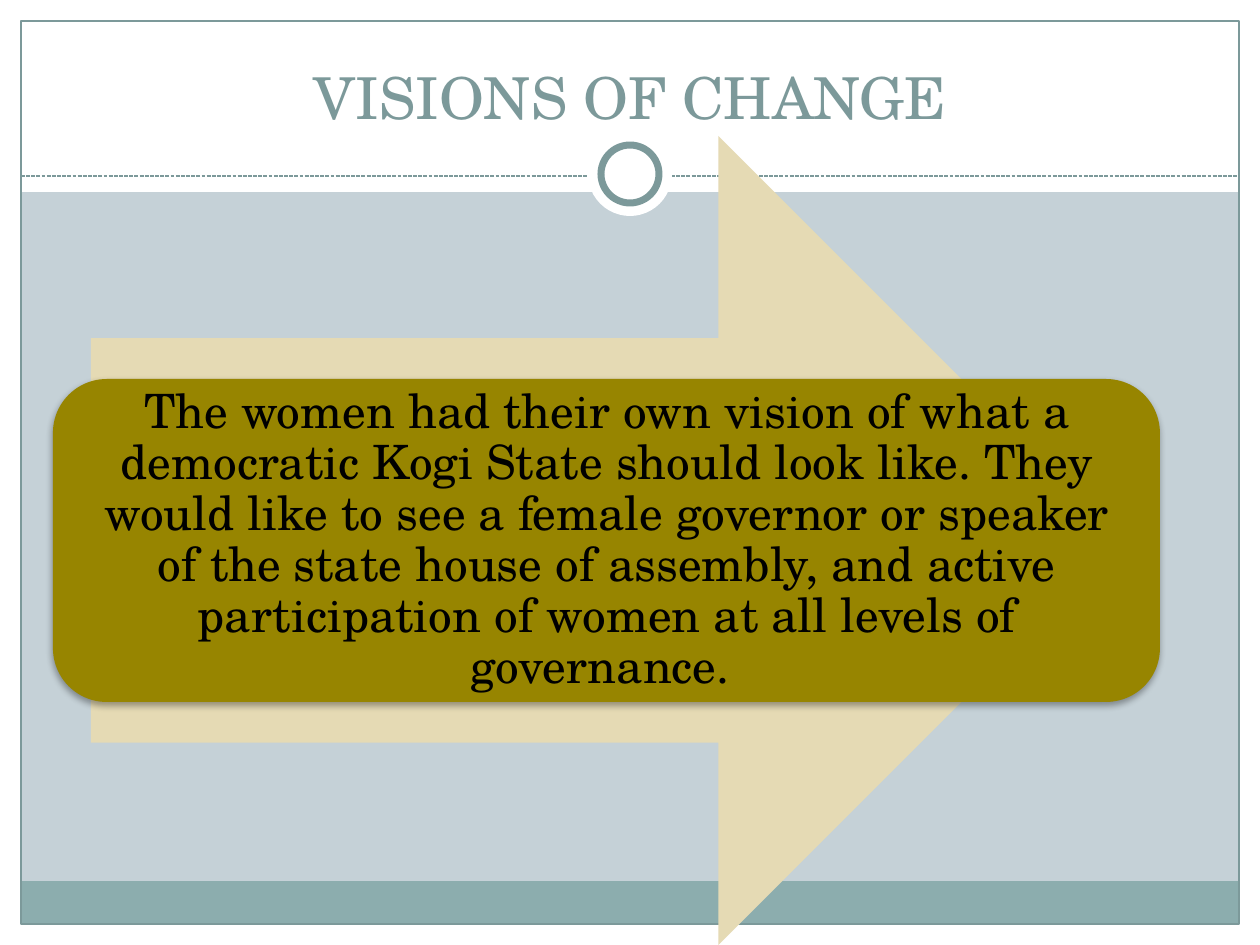
import pptx
import pptx.util
import pptx.dml.color
import pptx.oxml
import pptx.oxml.ns
from pptx.enum.dml import MSO_LINE
from pptx.enum.shapes import MSO_CONNECTOR, MSO_SHAPE
from pptx.enum.text import MSO_ANCHOR, PP_ALIGN

PX = 914400 / 126
WIDE, HIGH = 1260, 945
EDGE = 21
FONT = "TeX Gyre Schola"
WHITE, TEAL = "FFFFFF", "7C999A"
NS = pptx.oxml.ns.nsdecls("a")


def px(n):
    return pptx.util.Emu(round(n * PX))


def rgb(code):
    return pptx.dml.color.RGBColor.from_string(code)


def effect(item, inner=""):
    """Give a shape or connector its own effect list, empty by default."""
    item._element.spPr.append(
        pptx.oxml.parse_xml(f"<a:effectLst {NS}>{inner}</a:effectLst>"))


def draw(slide, kind, box, fill=None, line=None, width=0.75):
    item = slide.shapes.add_shape(kind, *map(px, box))
    item.shadow.inherit = False
    if fill:
        item.fill.solid()
        item.fill.fore_color.rgb = rgb(fill)
    else:
        item.fill.background()
    if line:
        item.line.color.rgb = rgb(line)
        item.line.width = pptx.util.Pt(width)
    else:
        item.line.fill.background()
    return item


def write(slide, box, text, size, color, anchor, pad, gap=1.0):
    """Place centred text; pad holds the side and the top inset."""
    frame = slide.shapes.add_textbox(*map(px, box)).text_frame
    frame.word_wrap = True
    frame.vertical_anchor = anchor
    frame.margin_left = frame.margin_right = px(pad[0])
    frame.margin_top = frame.margin_bottom = px(pad[1])
    para = frame.paragraphs[0]
    para.alignment = PP_ALIGN.CENTER
    para.line_spacing = gap
    run = para.add_run()
    run.text = text
    run.font.name = FONT
    run.font.size = pptx.util.Pt(size)
    run.font.color.rgb = rgb(color)


def border(slide, box):
    """White margins, foot band and thin outline around the page."""
    x, y, w, h = box
    rect = MSO_SHAPE.RECTANGLE
    for part in ((x, y + h - EDGE, w, EDGE), (x, y, w, 192),
                 (x, y, EDGE, h), (x + w - EDGE, y, EDGE, h)):
        draw(slide, rect, part, WHITE)
    inner = w - 2 * EDGE
    draw(slide, rect, (x + EDGE, y + h - EDGE - 43, inner, 43), "8CADAE")
    draw(slide, rect, (x + EDGE, y + EDGE, inner, h - 2 * EDGE), line=TEAL)


def header(slide, box):
    """Title over a dashed rule with a ring at its middle."""
    x, y, w, h = box
    rule = slide.shapes.add_connector(
        MSO_CONNECTOR.STRAIGHT, px(x), px(y + h), px(x + w), px(y + h))
    rule.line.color.rgb = rgb(TEAL)
    rule.line.width = pptx.util.Pt(0.75)
    rule.line.dash_style = MSO_LINE.SQUARE_DOT
    effect(rule)
    mid, level = x + w / 2, y + h - 2
    for size, line in ((84, None), (58, TEAL)):
        spot = (mid - size / 2, level - size / 2, size, size)
        draw(slide, MSO_SHAPE.OVAL, spot, WHITE, line, 4)
    write(slide, (x + 21, y + 11, w - 42, 105), "VISIONS OF CHANGE",
          33, TEAL, MSO_ANCHOR.BOTTOM, (13, 6))


def vision(slide, box):
    """Broad arrow with a rounded message card across it."""
    x, y, w, h = box
    draw(slide, MSO_SHAPE.RIGHT_ARROW, box, "E5DAB4")
    left, top, wide, high = x - 38, y + 243, 1107, 323
    card = draw(slide, MSO_SHAPE.ROUNDED_RECTANGLE,
                (left, top, wide, high), "978500")
    card._element.spPr.remove(
        card._element.spPr.find(pptx.oxml.ns.qn("a:effectLst")))
    effect(card, '<a:outerShdw blurRad="50800" dist="25400" dir="5400000" '
                 'rotWithShape="0"><a:srgbClr val="000000">'
                 '<a:alpha val="35000"/></a:srgbClr></a:outerShdw>')
    text = ("The women had their own vision of what a democratic Kogi State "
            "should look like. They would like to see a female governor or "
            "speaker of the state house of assembly, and active participation "
            "of women at all levels of governance. ")
    inset = 16
    write(slide, (left + inset, top + inset, wide - 2 * inset,
                  high - 2 * inset),
          text, 27, "000000", MSO_ANCHOR.MIDDLE, (14, 14), 0.9)


def main():
    deck = pptx.Presentation()
    deck.slide_width, deck.slide_height = px(WIDE), px(HIGH)
    slide = deck.slides.add_slide(deck.slide_layouts[6])
    back = slide.background.fill
    back.solid()
    back.fore_color.rgb = rgb("C5D1D7")
    border(slide, (0, 0, WIDE, HIGH))
    header(slide, (EDGE, EDGE, WIDE - 2 * EDGE, 155))
    vision(slide, (91, 136, 1032, 809))
    deck.save("out.pptx")


if __name__ == "__main__":
    main()
